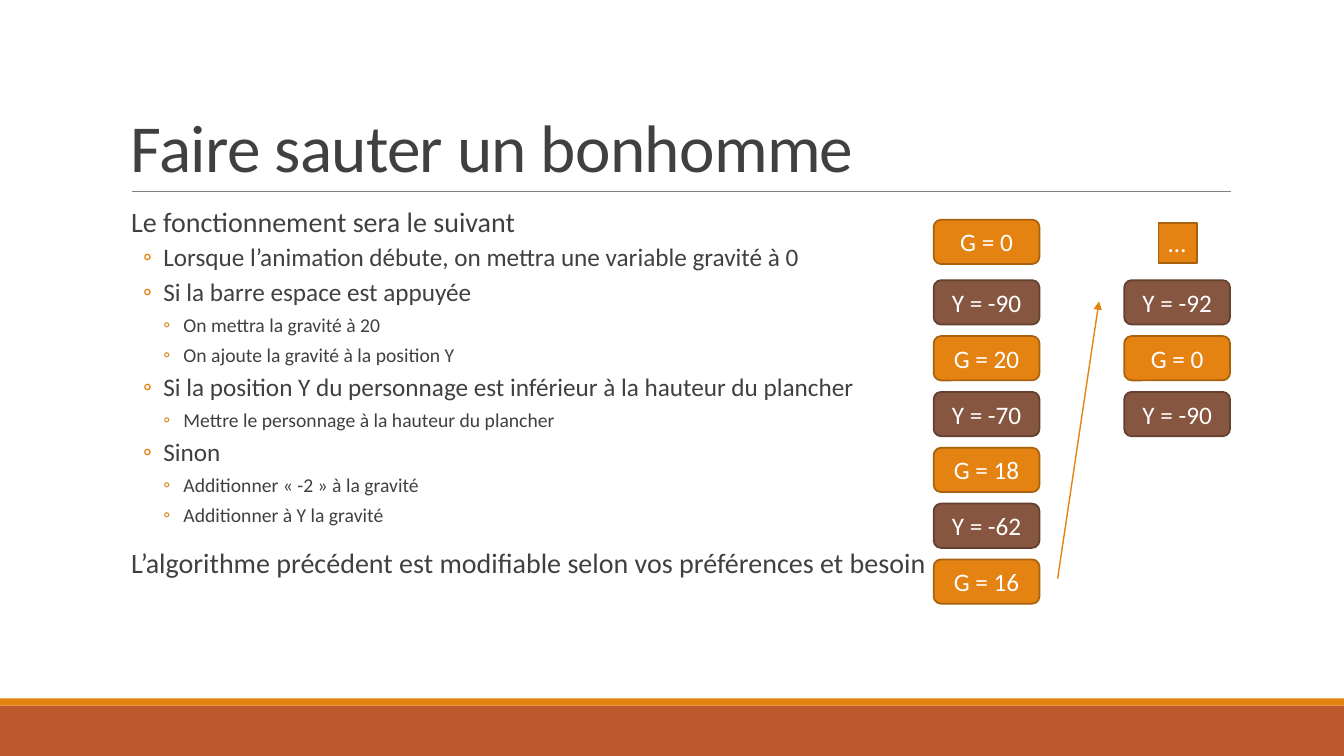
import pptx
import pptx.util
import pptx.dml.color
import pptx.enum.shapes
import pptx.enum.text
import pptx.oxml.ns
from lxml import etree

RGBColor = pptx.dml.color.RGBColor
Inches = pptx.util.Inches
Pt = pptx.util.Pt
SHAPE = pptx.enum.shapes.MSO_SHAPE
ANCHOR = pptx.enum.text.MSO_ANCHOR
ALIGN = pptx.enum.text.PP_ALIGN
qn = pptx.oxml.ns.qn

ORANGE = RGBColor(0xE4, 0x83, 0x12)
DARK_ORANGE = RGBColor(0xA9, 0x61, 0x0D)
BROWN = RGBColor(0x86, 0x56, 0x40)
DARK_BROWN = RGBColor(0x63, 0x40, 0x2F)
RUST = RGBColor(0xBD, 0x58, 0x2C)
GREY = RGBColor(0x80, 0x80, 0x80)
INK = RGBColor(0x40, 0x40, 0x40)
WHITE = RGBColor(0xFF, 0xFF, 0xFF)

FONT = "Calibri"
SLIDE_W, SLIDE_H = 13.33, 7.5
CONTENT_LEFT, CONTENT_W = 1.2, 11
STEP_LEFTS = (9.26, 11.15)
STEP_W, STEP_H = 1.05, 0.44
START_TOP = 2.18
GRID_TOP, GRID_LAST = 2.78, 5.55
ROW_PITCH = (GRID_LAST - GRID_TOP) / 5

LEVELS = (
    {"size": 20, "margin": 0.1, "indent": 0, "before": 12, "after": 2},
    {"size": 18, "margin": 0.42, "indent": -0.2, "before": 2, "after": 4},
    {"size": 14, "margin": 0.62, "indent": -0.2, "before": 2, "after": 4},
)
EXPLANATION = (
    (0, "Le fonctionnement sera le suivant"),
    (1, "Lorsque l’animation débute, on mettra une variable gravité à 0"),
    (1, "Si la barre espace est appuyée"),
    (2, "On mettra la gravité à 20"),
    (2, "On ajoute la gravité à la position Y"),
    (1, "Si la position Y du personnage est inférieur à la hauteur du plancher"),
    (2, "Mettre le personnage à la hauteur du plancher"),
    (1, "Sinon"),
    (2, "Additionner « -2 » à la gravité"),
    (2, "Additionner à Y la gravité"),
    (0, "L’algorithme précédent est modifiable selon vos préférences et besoin"),
)
STEP_COLUMNS = (
    ("Y = -90", "G = 20", "Y = -70", "G = 18", "Y = -62", "G = 16"),
    ("Y = -92", "G = 0", "Y = -90"),
)


def set_font(paragraph, size, color):
    paragraph.font.name = FONT
    paragraph.font.size = Pt(size)
    paragraph.font.color.rgb = color


def add_block(slide, preset, left, top, width, height, fill, outline=None):
    block = slide.shapes.add_shape(
        preset, Inches(left), Inches(top), Inches(width), Inches(height))
    block.shadow.inherit = False
    block.fill.solid()
    block.fill.fore_color.rgb = fill
    if outline is None:
        block.line.fill.background()
    else:
        block.line.color.rgb = outline
        block.line.width = Pt(1.25)
    return block


def add_step(slide, left, top, label):
    fill, outline = (
        (ORANGE, DARK_ORANGE) if label.startswith("G") else (BROWN, DARK_BROWN))
    step = add_block(
        slide, SHAPE.ROUNDED_RECTANGLE, left, top, STEP_W, STEP_H, fill, outline)
    step.text_frame.vertical_anchor = ANCHOR.MIDDLE
    paragraph = step.text_frame.paragraphs[0]
    paragraph.text = label
    paragraph.alignment = ALIGN.CENTER
    set_font(paragraph, 18, WHITE)


def add_ellipsis(slide):
    ellipsis = add_block(
        slide, SHAPE.RECTANGLE, 11.49, 2.21, 0.38, 0.4, ORANGE, DARK_ORANGE)
    frame = ellipsis.text_frame
    frame.word_wrap = False
    frame.auto_size = pptx.enum.text.MSO_AUTO_SIZE.SHAPE_TO_FIT_TEXT
    frame.vertical_anchor = ANCHOR.TOP
    paragraph = frame.paragraphs[0]
    paragraph.text = "…"
    paragraph.alignment = ALIGN.LEFT
    set_font(paragraph, 18, WHITE)


def add_line(slide, start, end, color, width, arrow=False):
    line = slide.shapes.add_connector(
        pptx.enum.shapes.MSO_CONNECTOR.STRAIGHT,
        *(Inches(value) for value in start + end))
    line.line.color.rgb = color
    line.line.width = Pt(width)
    if arrow:
        etree.SubElement(line.line._get_or_add_ln(), qn("a:tailEnd"), type="triangle")
    etree.SubElement(line._element.spPr, qn("a:effectLst"))


def add_text_area(slide, top, height):
    area = slide.shapes.add_textbox(
        Inches(CONTENT_LEFT), Inches(top), Inches(CONTENT_W), Inches(height))
    area.text_frame.word_wrap = True
    return area.text_frame


def add_title(slide):
    frame = add_text_area(slide, 0.31, 1.59)
    frame.vertical_anchor = ANCHOR.BOTTOM
    paragraph = frame.paragraphs[0]
    paragraph.text = "Faire sauter un bonhomme"
    paragraph.line_spacing = 0.85
    set_font(paragraph, 48, INK)
    paragraph.font._element.set("spc", "-50")


def format_level(paragraph, level):
    style = LEVELS[level]
    paragraph.level = level
    paragraph.line_spacing = 0.9
    paragraph.space_before = Pt(style["before"])
    paragraph.space_after = Pt(style["after"])
    properties = paragraph._p.get_or_add_pPr()
    properties.set("marL", str(Inches(style["margin"])))
    properties.set("indent", str(Inches(style["indent"])))
    if level:
        bullet_color = etree.SubElement(properties, qn("a:buClr"))
        etree.SubElement(bullet_color, qn("a:srgbClr"), val=str(ORANGE))
        etree.SubElement(properties, qn("a:buFont"), typeface=FONT)
        etree.SubElement(properties, qn("a:buChar"), char="◦")
    set_font(paragraph, style["size"], INK)


def add_explanation(slide):
    frame = add_text_area(slide, 2.02, 4.4)
    frame.margin_left = frame.margin_right = 0
    for index, (level, sentence) in enumerate(EXPLANATION):
        paragraph = frame.add_paragraph() if index else frame.paragraphs[0]
        paragraph.text = sentence
        format_level(paragraph, level)


def main():
    presentation = pptx.Presentation()
    presentation.slide_width = Inches(SLIDE_W)
    presentation.slide_height = Inches(SLIDE_H)
    slide = presentation.slides.add_slide(presentation.slide_layouts[6])

    add_block(slide, SHAPE.RECTANGLE, 0, 7, SLIDE_W, 0.5, RUST)
    add_block(slide, SHAPE.RECTANGLE, 0, 6.93, SLIDE_W, 0.07, ORANGE)
    add_line(slide, (1.31, 1.9), (12.21, 1.9), GREY, 0.5)
    add_title(slide)
    add_explanation(slide)

    add_step(slide, STEP_LEFTS[0], START_TOP, "G = 0")
    for left, labels in zip(STEP_LEFTS, STEP_COLUMNS):
        for row, label in enumerate(labels):
            add_step(slide, left, GRID_TOP + row * ROW_PITCH, label)
    add_ellipsis(slide)
    add_line(slide, (10.49, 5.74), (10.9, 2.99), ORANGE, 1, arrow=True)

    presentation.save("out.pptx")


if __name__ == "__main__":
    main()
